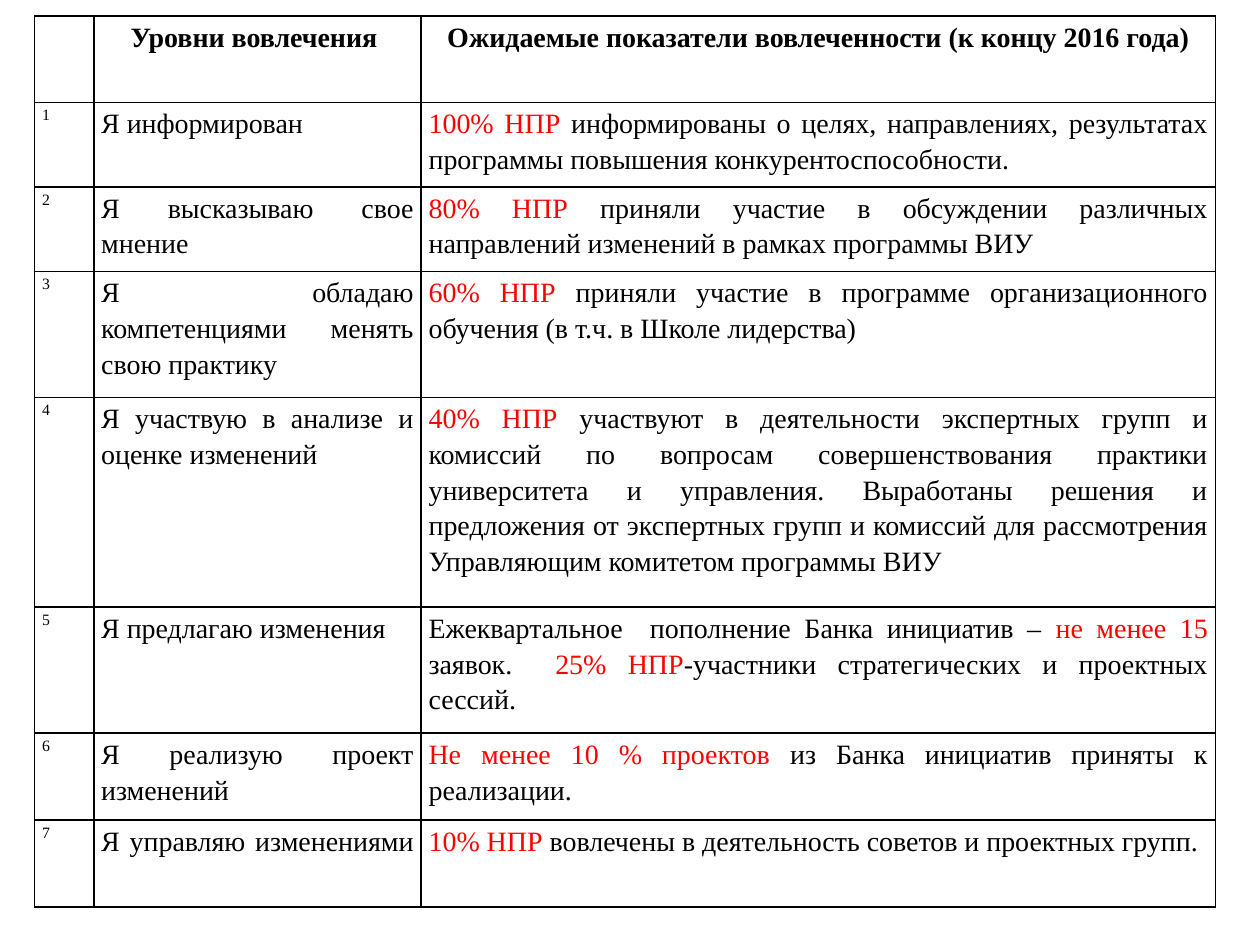
"""Build a slide with a table of engagement levels and expected indicators."""
import pptx
import pptx.dml.color
import pptx.enum.text
import pptx.oxml
import pptx.oxml.ns
import pptx.util

Cm, Pt = pptx.util.Cm, pptx.util.Pt
ALIGN = pptx.enum.text.PP_ALIGN
BLACK, RED = "000000", "FF0000"

HEADER = ("", "Уровни вовлечения ",
          "Ожидаемые показатели вовлеченности (к концу 2016 года)")
LEVELS = [
    ("Я информирован ",
     "*100% НПР *информированы о целях, направлениях, результатах "
     "программы повышения конкурентоспособности. "),
    ("Я высказываю свое мнение ",
     "*80% НПР *приняли участие в обсуждении различных направлений "
     "изменений в рамках программы ВИУ "),
    ("Я обладаю компетенциями менять свою практику ",
     "*60% НПР* приняли участие в программе организационного обучения "
     "(в т.ч. в Школе лидерства)"),
    ("Я участвую в анализе и оценке изменений ",
     "*40% НПР* участвуют в деятельности экспертных групп и комиссий по "
     "вопросам совершенствования практики университета и управления. "
     "Выработаны решения и предложения от экспертных групп и комиссий для "
     "рассмотрения Управляющим комитетом программы ВИУ "),
    ("Я предлагаю изменения ",
     "Ежеквартальное  пополнение Банка инициатив – *не менее 15 *заявок.  "
     "*25% НПР*-участники стратегических и проектных сессий."),
    ("Я реализую проект изменений ",
     "*Не менее 10 % проектов *из Банка инициатив приняты к реализации."),
    ("Я управляю изменениями ",
     "*10% НПР *вовлечены в деятельность советов и проектных групп. "),
]
COLS = (1.19, 6.6, 16.01)
ROWS = (1.75, 1.7, 1.7, 2.54, 4.23, 2.54, 1.75, 1.75)


def rgb(value):
    return pptx.dml.color.RGBColor.from_string(value)


def write(tf, text, size=16, bold=False, align=ALIGN.JUSTIFY):
    """Write text into a frame, with the parts between asterisks in red."""
    p = tf.paragraphs[0]
    p.alignment, p.line_spacing, p.space_after = align, 1.15, Pt(10)
    for i, part in enumerate(text.split("*")):
        if part:
            r = p.add_run()
            r.text = part
            r.font.name, r.font.size, r.font.bold = "Times New Roman", Pt(size), bold
            r.font.color.rgb = rgb(RED if i % 2 else BLACK)


def format_cell(cell):
    """Set margins, thin black borders and no fill on a cell."""
    cell.margin_left = cell.margin_right = Cm(0.15)
    cell.margin_top, cell.margin_bottom = Cm(0.03), Cm(0)
    pr = cell._tc.get_or_add_tcPr()
    for side in ("lnL", "lnR", "lnT", "lnB"):
        pr.append(pptx.oxml.parse_xml(
            f'<a:{side} {pptx.oxml.ns.nsdecls("a")} w="{Pt(1)}"><a:solidFill>'
            f'<a:srgbClr val="{BLACK}"/></a:solidFill></a:{side}>'))
    cell.fill.background()


def main():
    prs = pptx.Presentation()
    prs.slide_width, prs.slide_height = Cm(25.4), Cm(19.05)
    s = prs.slides.add_slide(prs.slide_layouts[6])
    table = s.shapes.add_table(len(ROWS), len(COLS), Cm(0.7), Cm(0.32),
                               Cm(sum(COLS)), Cm(sum(ROWS))).table
    table.first_row = table.horz_banding = False
    for col, width in zip(table.columns, COLS):
        col.width = Cm(width)
    for row, height in zip(table.rows, ROWS):
        row.height = Cm(height)
    for cell in table.iter_cells():
        format_cell(cell)
    for c, text in enumerate(HEADER):
        write(table.cell(0, c).text_frame, text, bold=True, align=ALIGN.CENTER)
    for n, (level, target) in enumerate(LEVELS, 1):
        write(table.cell(n, 0).text_frame, str(n), size=9)
        write(table.cell(n, 1).text_frame, level)
        write(table.cell(n, 2).text_frame, target)
    prs.save("out.pptx")


if __name__ == "__main__":
    main()
